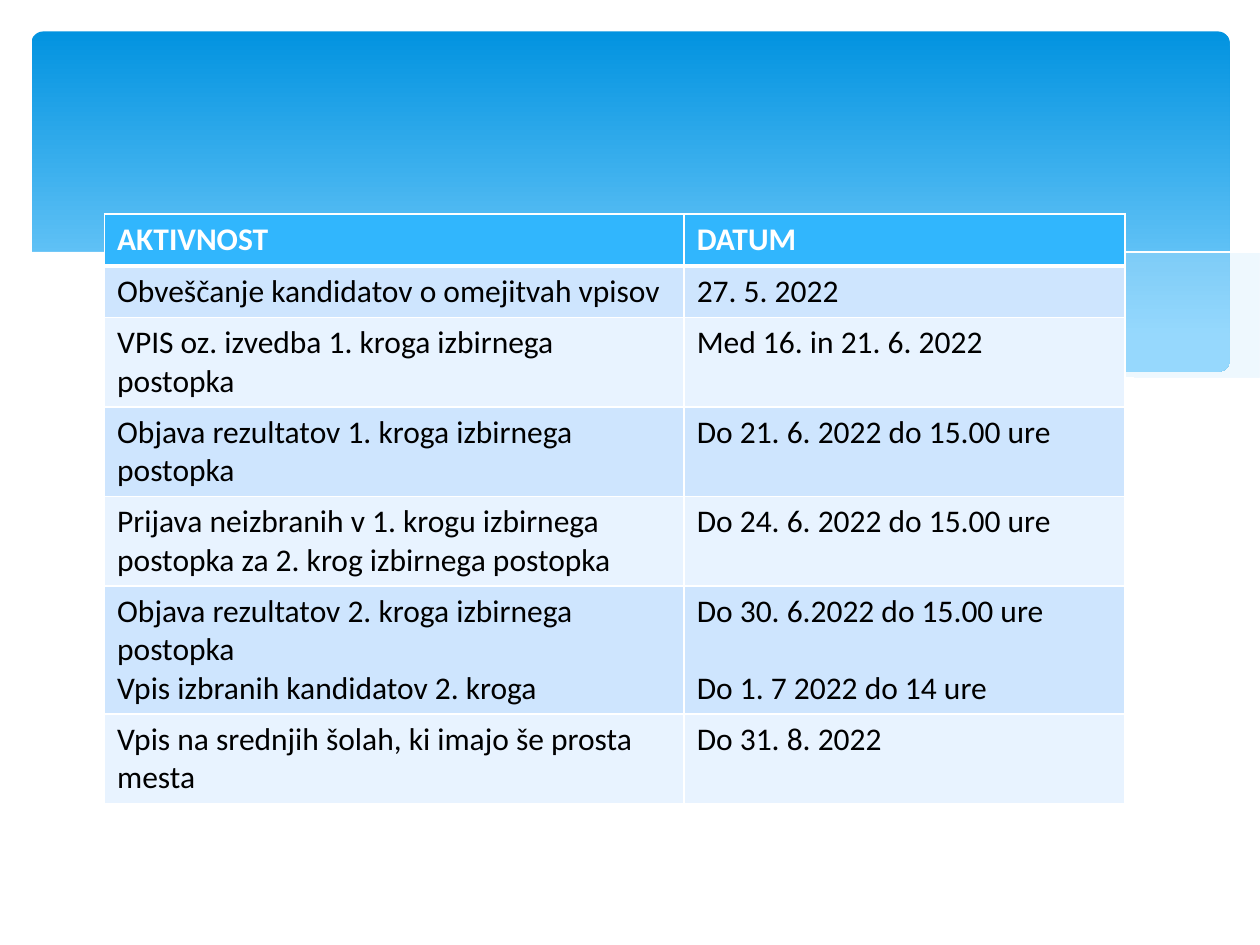
from dataclasses import dataclass
from typing import Optional

from lxml.etree import SubElement
from pptx import Presentation
from pptx.dml.color import RGBColor
from pptx.enum.shapes import MSO_SHAPE as Shape
from pptx.oxml.ns import qn
from pptx.util import Inches, Pt

Point = tuple[float, float]
COLS, ROWS = 10, 7.5  # slide grid
UNIT = Inches(1)  # one grid step


@dataclass(frozen=True)
class Theme:
    font: str = "Calibri"
    size: int = 18
    white: str = "FFFFFF"
    text: str = "000000"
    banner_top: str = "0293E0"
    banner_bottom: str = "83D3FE"
    wave: str = "C6E7FC"
    header: str = "31B6FD"
    bands: tuple[str, str] = ("CEE5FE", "E8F3FF")
    rule: float = 1
    header_rule: float = 3


@dataclass(frozen=True)
class Wave:
    """Smooth edges joined end to end; filled if it has a fill, else a hairline."""
    edges: list[list[Point]]
    fill: Optional[str] = None
    opacity: int = 100


@dataclass(frozen=True)
class Activity:
    names: list[str]
    dates: list[str]


THEME = Theme()

WAVES = [
    Wave([[(9.76, 2), (9.35, 2.07), (8.61, 2.23), (7.79, 2.43), (7.06, 2.57), (6.61, 2.65)],
          [(6.61, 2.65), (7.05, 2.71), (7.57, 2.76), (8.14, 2.78), (8.63, 2.75),
           (9.05, 2.69), (9.42, 2.59), (9.76, 2.47)]], THEME.wave, 29),
    Wave([[(8.93, 2.73), (8.37, 2.65), (7.75, 2.54), (7.06, 2.4), (6.29, 2.22), (5.69, 2.08),
           (5.14, 1.98), (4.64, 1.91), (4.2, 1.87), (3.61, 1.86), (3.13, 1.88), (2.86, 1.91)],
          [(2.86, 1.91), (3.42, 1.99), (4.04, 2.11), (4.91, 2.32), (5.66, 2.48), (6.34, 2.61),
           (6.95, 2.7), (7.48, 2.76), (8.07, 2.79), (8.57, 2.77), (8.93, 2.73)]], THEME.wave, 40),
    Wave([[(3.09, 1.95), (3.43, 1.9), (4.16, 1.87), (4.89, 1.9), (5.56, 1.97), (6.36, 2.08),
           (7.27, 2.26), (8.31, 2.51), (9.07, 2.72)]]),
    Wave([[(6.13, 2.57), (6.95, 2.35), (7.76, 2.16), (8.66, 1.99), (9.24, 1.9), (9.75, 1.85)]]),
    Wave([[(9.77, 2.46), (9.4, 2.59), (8.99, 2.69), (8.5, 2.75), (8.09, 2.77), (7.61, 2.75),
           (6.88, 2.68), (6.03, 2.54), (5.29, 2.39), (4.47, 2.2), (3.65, 2.02), (2.92, 1.91),
           (2.3, 1.85), (1.77, 1.84), (1.32, 1.86), (0.85, 1.93), (0.52, 2.01), (0.23, 2.13)],
          [(0.23, 3.29), (9.77, 3.29)]], THEME.white),
]

ACTIVITIES = [
    Activity(["Obveščanje kandidatov o omejitvah vpisov"], ["27. 5. 2022"]),
    Activity(["VPIS oz. izvedba 1. kroga izbirnega postopka"], ["Med 16. in 21. 6. 2022"]),
    Activity(["Objava rezultatov 1. kroga izbirnega postopka"], ["Do 21. 6. 2022 do 15.00 ure"]),
    Activity(["Prijava neizbranih v 1. krogu izbirnega postopka za 2. krog izbirnega postopka"],
             ["Do 24. 6. 2022 do 15.00 ure"]),
    Activity(["Objava rezultatov 2. kroga izbirnega postopka", "Vpis izbranih kandidatov 2. kroga"],
             ["Do 30. 6.2022 do 15.00 ure", "Do 1. 7 2022 do 14 ure"]),
    Activity(["Vpis na srednjih šolah, ki imajo še prosta mesta"], ["Do 31. 8. 2022"]),
]


def rgb(color: str) -> RGBColor:
    return RGBColor.from_string(color)


def grid(*steps: float) -> list[int]:
    return [int(step * UNIT) for step in steps]


def smooth(knots: list[Point], steps: int = 4) -> list[Point]:
    """Catmull-Rom curve through the knots; two knots stay a straight line."""
    if len(knots) < 3:
        return knots
    ends = [knots[0], *knots, knots[-1]]
    curve = []
    for a, b, c, d in zip(ends, ends[1:], ends[2:], ends[3:]):
        for t in (i / steps for i in range(steps)):
            curve.append(tuple(
                (2 * q + (r - p) * t + (2 * p - 5 * q + 4 * r - s) * t ** 2
                 + (3 * q - p - 3 * r + s) * t ** 3) / 2
                for p, q, r, s in zip(a, b, c, d)))
    return curve + [knots[-1]]


def draw_banner(shapes) -> None:
    sp = shapes.add_shape(Shape.ROUNDED_RECTANGLE, *grid(0.25, 0.25, COLS - 0.49, 2.7))
    sp.adjustments[0] = 0.034
    sp.shadow.inherit = False
    sp.line.fill.background()
    sp.fill.gradient()
    sp.fill.gradient_angle = 270
    stops = ((0, THEME.banner_top), (0.9, THEME.banner_bottom))
    for stop, (position, color) in zip(sp.fill.gradient_stops, stops):
        stop.position = position
        stop.color.rgb = rgb(color)


def draw_wave(shapes, wave: Wave) -> None:
    points = [point for edge in wave.edges for point in smooth(edge)]
    builder = shapes.build_freeform(*points[0], scale=UNIT)
    builder.add_line_segments(points[1:], close=wave.fill is not None)
    sp = builder.convert_to_shape()
    sp.shadow.inherit = False
    if wave.fill is None:
        sp.fill.background()
        sp.line.color.rgb = rgb(THEME.white)
        sp.line.width = Pt(0)
        return
    sp.line.fill.background()
    sp.fill.solid()
    sp.fill.fore_color.rgb = rgb(wave.fill)
    if wave.opacity < 100:
        color = sp.element.spPr.find(qn("a:solidFill"))[0]
        SubElement(color, qn("a:alpha"), val=str(wave.opacity * 1000))


def set_borders(cell, **widths: float) -> None:
    tc_pr = cell._tc.get_or_add_tcPr()
    for side in "LRTB":
        width = Pt(widths.get(side, THEME.rule))
        ln = SubElement(tc_pr, qn(f"a:ln{side}"), w=str(width))
        SubElement(SubElement(ln, qn("a:solidFill")), qn("a:srgbClr"), val=THEME.white)


def write_cell(cell, lines: list[str], *, fill: str, color: str = THEME.text,
               bold: bool = False, gap: float = 0, **borders: float) -> None:
    set_borders(cell, **borders)
    cell.fill.solid()
    cell.fill.fore_color.rgb = rgb(fill)
    tf = cell.text_frame
    for i, line in enumerate(lines):
        p = tf.add_paragraph() if i else tf.paragraphs[0]
        p.space_before = Pt(gap if i else 0)
        r = p.add_run()
        r.text = line
        r.font.name, r.font.size, r.font.bold = THEME.font, Pt(THEME.size), bold
        r.font.color.rgb = rgb(color)


def draw_schedule(shapes) -> None:
    widths, row_height = (4.6, 3.5), 0.41
    count = len(ACTIVITIES) + 1
    frame = shapes.add_table(count, len(widths),
                             *grid(0.83, 1.7, sum(widths), row_height * count))
    table = frame.table
    for column, width in zip(table.columns, grid(*widths)):
        column.width = width
    for row in table.rows:
        row.height = Inches(row_height)
    for cell, title in zip(table.rows[0].cells, ("AKTIVNOST", "DATUM")):
        write_cell(cell, [title], fill=THEME.header, color=THEME.white, bold=True,
                   B=THEME.header_rule)
    for i, activity in enumerate(ACTIVITIES):
        style = dict(fill=THEME.bands[i % 2], T=THEME.rule if i else THEME.header_rule)
        write_cell(table.cell(i + 1, 0), activity.names, **style)
        # the second date lines up with the second name, one text line lower
        write_cell(table.cell(i + 1, 1), activity.dates, gap=THEME.size * 1.22, **style)


def main() -> None:
    prs = Presentation()
    prs.slide_width, prs.slide_height = grid(COLS, ROWS)
    shapes = prs.slides.add_slide(prs.slide_layouts[6]).shapes
    draw_banner(shapes)
    for wave in WAVES:
        draw_wave(shapes, wave)
    draw_schedule(shapes)
    prs.save("out.pptx")


if __name__ == "__main__":
    main()
